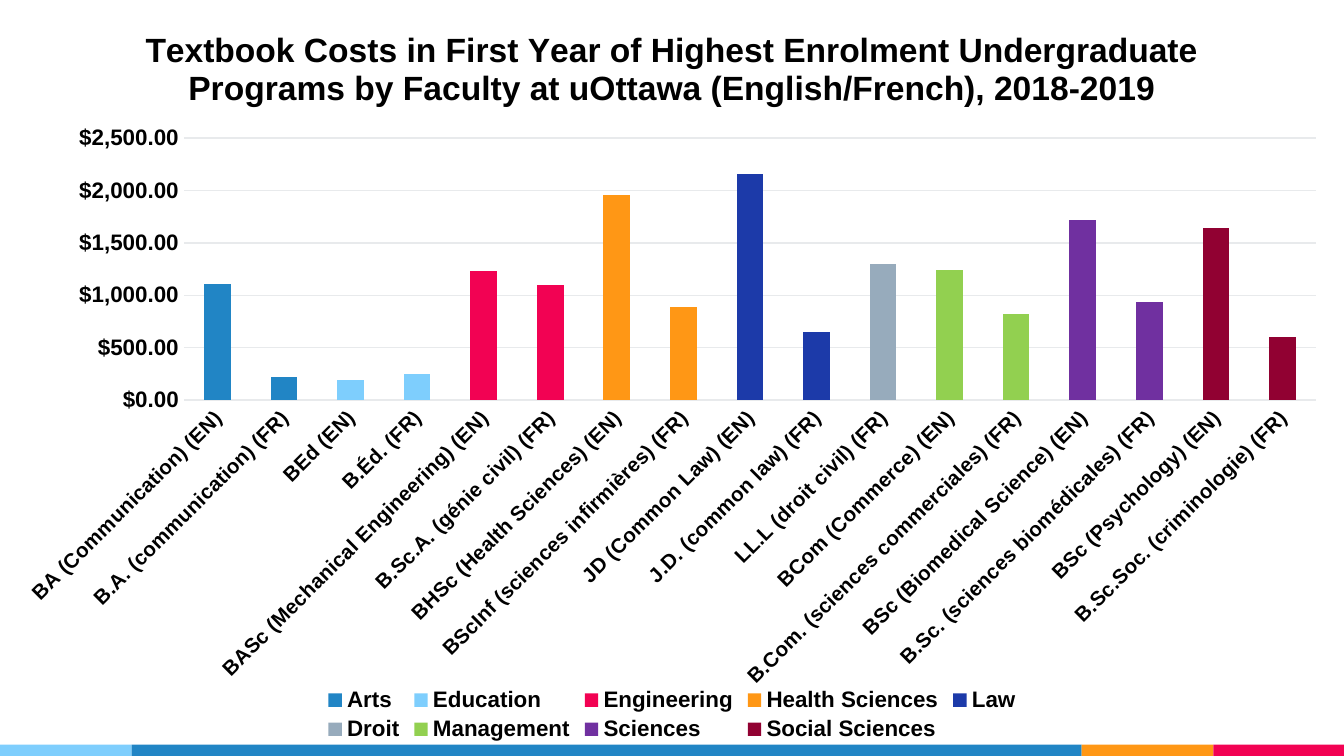
import dataclasses

import lxml.etree
import pptx
import pptx.chart.data
import pptx.dml.color
import pptx.enum.chart
import pptx.enum.shapes
import pptx.oxml.ns
import pptx.util

Pt = pptx.util.Pt
qn = pptx.oxml.ns.qn


@dataclasses.dataclass(frozen=True)
class Theme:
    font: str = "Arial"
    ink: str = "000000"
    base_ink: str = "677480"
    grid: str = "E8EAEC"
    sky: str = "7ECEFD"
    blue: str = "2185C5"
    orange: str = "FF9715"
    pink: str = "F20253"
    navy: str = "1C3AA9"
    slate: str = "97ABBC"
    green: str = "92D050"
    purple: str = "7030A0"
    maroon: str = "910132"
    title_size: float = 18
    axis_size: float = 12
    program_size: float = 11
    base_size: float = 10


THEME = Theme()
TITLE = ("Textbook Costs in First Year of Highest Enrolment Undergraduate "
         "Programs by Faculty at uOttawa (English/French), 2018-2019")
DOLLARS = '"$"#,##0.00'

# Faculty, colour, cost of each program
FACULTIES = [
    ("Arts", THEME.blue, {"BA (Communication) (EN)": 1110,
                          "B.A. (communication) (FR)": 220}),
    ("Education", THEME.sky, {"BEd (EN)": 190, "B.Éd. (FR)": 250}),
    ("Engineering", THEME.pink, {"BASc (Mechanical Engineering) (EN)": 1230,
                                 "B.Sc.A. (génie civil) (FR)": 1100}),
    ("Health Sciences", THEME.orange, {"BHSc (Health Sciences) (EN)": 1960,
                                       "BScInf (sciences infirmières) (FR)": 890}),
    ("Law", THEME.navy, {"JD (Common Law) (EN)": 2160,
                         "J.D. (common law) (FR)": 650}),
    ("Droit", THEME.slate, {"LL.L (droit civil) (FR)": 1300}),
    ("Management", THEME.green, {"BCom (Commerce) (EN)": 1240,
                                 "B.Com. (sciences commerciales) (FR)": 820}),
    ("Sciences", THEME.purple, {"BSc (Biomedical Science) (EN)": 1720,
                                "B.Sc. (sciences biomédicales) (FR)": 940}),
    ("Social Sciences", THEME.maroon, {"BSc (Psychology) (EN)": 1640,
                                       "B.Sc.Soc. (criminologie) (FR)": 600}),
]


def rgb(color):
    return pptx.dml.color.RGBColor.from_string(color)


def apply(target, values):
    for name, value in values.items():
        setattr(target, name, value)


class SlideBuilder:
    def __init__(self, slide, theme):
        self.slide = slide
        self.theme = theme

    def style_font(self, font, size, color=None, bold=True):
        apply(font, {"name": self.theme.font, "size": Pt(size), "bold": bold})
        font.color.rgb = rgb(color or self.theme.ink)

    def style_line(self, line):
        line.width = Pt(0.75)
        line.color.rgb = rgb(self.theme.grid)

    def band(self, left, top, width, height, color):
        band = self.slide.shapes.add_shape(
            pptx.enum.shapes.MSO_SHAPE.RECTANGLE,
            Pt(left), Pt(top), Pt(width), Pt(height))
        band.shadow.inherit = False
        band.fill.solid()
        band.fill.fore_color.rgb = rgb(color)
        band.line.fill.background()

    def cost_chart(self, left, top, width, height):
        programs = [name for _, _, costs in FACULTIES for name in costs]
        data = pptx.chart.data.CategoryChartData(number_format=DOLLARS)
        data.categories = programs
        for faculty, _, costs in FACULTIES:
            data.add_series(faculty, [costs.get(name) for name in programs])
        chart = self.slide.shapes.add_chart(
            pptx.enum.chart.XL_CHART_TYPE.COLUMN_STACKED,
            Pt(left), Pt(top), Pt(width), Pt(height), data).chart
        self.style_font(chart.font, self.theme.base_size, self.theme.base_ink, False)

        bars = chart.plots[0]
        apply(bars, {"gap_width": 150, "overlap": 100, "vary_by_categories": False})
        for series, (_, color, _) in zip(bars.series, FACULTIES):
            series.invert_if_negative = False
            series.format.fill.solid()
            series.format.fill.fore_color.rgb = rgb(color)

        self.chart_title(chart)
        self.axes(chart)
        self.legend(chart)
        self.place_plot(chart, x=0.137, y=0.185, w=0.842, h=0.351)

    def chart_title(self, chart):
        chart.has_title = True
        chart.chart_title.include_in_layout = False
        heading = chart.chart_title.text_frame.paragraphs[0]
        run = heading.add_run()
        run.text = TITLE
        for font in (heading.font, run.font):
            self.style_font(font, self.theme.title_size)

    def axes(self, chart):
        no_tick = pptx.enum.chart.XL_TICK_MARK.NONE
        program_axis, cost_axis = chart.category_axis, chart.value_axis
        for axis, size in ((program_axis, self.theme.program_size),
                           (cost_axis, self.theme.axis_size)):
            apply(axis, {"major_tick_mark": no_tick, "minor_tick_mark": no_tick})
            self.style_font(axis.tick_labels.font, size)
        self.style_line(program_axis.format.line)
        slant = program_axis.tick_labels.font._element.getparent().getparent()
        slant.getparent().find(qn("a:bodyPr")).set("rot", str(-45 * 60000))

        apply(cost_axis, {"minimum_scale": 0, "maximum_scale": 2500,
                          "major_unit": 500, "has_major_gridlines": True})
        apply(cost_axis.tick_labels, {"number_format": DOLLARS,
                                      "number_format_is_linked": False})
        cost_axis.format.line.fill.background()
        self.style_line(cost_axis.major_gridlines.format.line)

    def legend(self, chart):
        chart.has_legend = True
        apply(chart.legend, {
            "position": pptx.enum.chart.XL_LEGEND_POSITION.BOTTOM,
            "include_in_layout": False})
        self.style_font(chart.legend.font, self.theme.axis_size)

    def place_plot(self, chart, **box):
        """Fix the inner plot area as fractions of the chart."""
        area = chart._chartSpace.chart.plotArea
        for old in area.findall(qn("c:layout")):
            area.remove(old)
        layout = lxml.etree.Element(qn("c:layout"))
        area.insert(0, layout)
        manual = lxml.etree.SubElement(layout, qn("c:manualLayout"))
        settings = {"layoutTarget": "inner", "xMode": "edge", "yMode": "edge", **box}
        for tag, value in settings.items():
            lxml.etree.SubElement(manual, qn("c:" + tag)).set("val", str(value))


def main():
    presentation = pptx.Presentation()
    apply(presentation, {"slide_width": Pt(720), "slide_height": Pt(405)})
    slide = presentation.slides.add_slide(presentation.slide_layouts[6])
    builder = SlideBuilder(slide, THEME)

    left = 0
    for width, color in ((70.5, THEME.sky), (509, THEME.blue),
                         (70.5, THEME.orange), (70, THEME.pink)):
        builder.band(left, 399, width, 6, color)
        left += width
    builder.cost_chart(0, 0, 720, 400)
    presentation.save("out.pptx")


if __name__ == "__main__":
    main()
